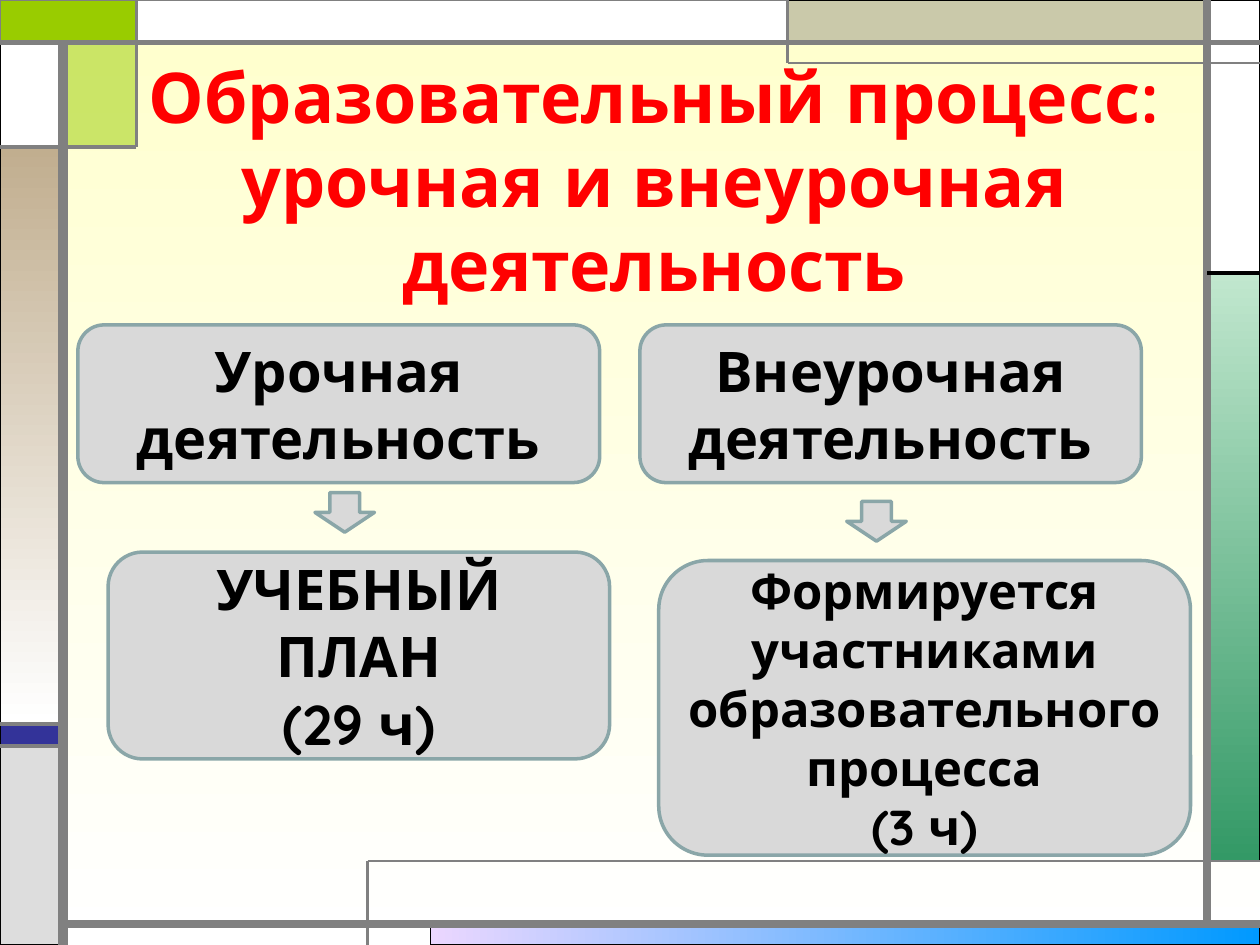
from lxml import etree
from pptx import Presentation
from pptx import util as u
from pptx.dml.color import RGBColor
from pptx.enum import shapes, text
from pptx.oxml.ns import qn

FONT = "Quicksand"
GREY, BLACK, WHITE = "808080", "000000", "FFFFFF"
WIDE, HIGH = 25.4, 19.05
# Shared edges of the frame, in cm
LEFT, RIGHT = 1.27, 24.34
TOP, BASE = 0.85, 18.63
TAB, HEAD = 2.75, 15.88
STEP, DROP = 2.96, 5.5
BAND, FOOT = 14.6, 15.03
NOTE, SHELF = 7.41, 17.36


def tint(code):
    return RGBColor.from_string(code)


def blend(fill, start, end, angle):
    fill.gradient()
    fill.gradient_angle = angle
    for stop, code in zip(fill.gradient_stops, (start, end)):
        stop.color.rgb = tint(code)


def shape(slide, kind, box, fill, line, width):
    item = slide.shapes.add_shape(kind, *map(u.Cm, box))
    item.shadow.inherit = False
    if isinstance(fill, tuple):
        blend(item.fill, *fill)
    else:
        item.fill.solid()
        item.fill.fore_color.rgb = tint(fill)
    item.line.color.rgb = tint(line)
    item.line.width = u.Pt(width)
    return item


def panel(slide, x1, y1, x2, y2, fill, line=BLACK, width=0.75):
    box = (x1, y1, x2 - x1, y2 - y1)
    return shape(slide, shapes.MSO_SHAPE.RECTANGLE, box, fill, line, width)


def fade(item, percent):
    color = item.fill._xPr.find(qn("a:solidFill"))[0]
    etree.SubElement(color, qn("a:alpha"), val=str(percent * 1000))


def rule(slide, x1, y1, x2, y2, width, color=GREY):
    line = slide.shapes.add_connector(
        shapes.MSO_CONNECTOR.STRAIGHT, *map(u.Cm, (x1, y1, x2, y2)))
    line.line.color.rgb = tint(color)
    line.line.width = u.Pt(width)
    etree.SubElement(line._element.spPr, qn("a:effectLst"))


def write(item, words, size=32, color=BLACK, bold=True):
    frame = item.text_frame
    frame.word_wrap = True
    frame.vertical_anchor = text.MSO_ANCHOR.MIDDLE
    frame.text = words
    for para in frame.paragraphs:
        para.alignment = text.PP_ALIGN.CENTER
        font = para.runs[0].font
        font.name, font.size, font.bold = FONT, u.Pt(size), bold
        font.color.rgb = tint(color)


def card(slide, box, words, size=32):
    item = shape(slide, shapes.MSO_SHAPE.ROUNDED_RECTANGLE, box,
                 "D9D9D9", "8AA6A8", 2)
    write(item, words, size=size)


def arrow(slide, x, y):
    shape(slide, shapes.MSO_SHAPE.DOWN_ARROW, (x, y, 1.2, 0.8),
          "D9D9D9", "8AA6A8", 2)


def frame(slide):
    # Coloured panels around the edge
    panel(slide, 8.68, BASE, WIDE, HIGH, ("EBD7FF", "0099FF", 0))
    panel(slide, RIGHT, DROP, WIDE, SHELF, ("C1E7CE", "339966", 270))
    panel(slide, 0, BAND, LEFT, FOOT, "333399")
    panel(slide, 0, FOOT, LEFT, HIGH, "DDDDDD")
    panel(slide, RIGHT, 0, WIDE, DROP, WHITE)
    panel(slide, HEAD, 0, RIGHT, TOP, "CAC9AA")
    fade(panel(slide, LEFT, TOP, TAB, STEP, "99CC00"), 50)
    panel(slide, 0, STEP, LEFT, BAND, ("C1AE8F", WHITE, 270))
    panel(slide, 0, TOP, LEFT, STEP, WHITE)
    panel(slide, 0, 0, TAB, TOP, "99CC00", GREY, 1.5)
    panel(slide, TAB, 0, HEAD, TOP, WHITE, GREY)
    # Main rules
    rule(slide, LEFT, HIGH, LEFT, TOP, 6)
    rule(slide, LEFT, BASE, WIDE, BASE, 4.5)
    rule(slide, RIGHT, BASE, RIGHT, 0, 4.5)
    rule(slide, 0, TOP, WIDE, TOP, 3)
    # Thin rules
    rule(slide, WIDE, 1.27, HEAD, 1.27, 1.5)
    rule(slide, HEAD, 1.27, HEAD, 0, 1.5)
    rule(slide, RIGHT, DROP, WIDE, DROP, 2.25, BLACK)
    rule(slide, TAB, 0, TAB, STEP, 1.5)
    rule(slide, NOTE, HIGH, NOTE, SHELF, 1.5)
    rule(slide, NOTE, SHELF, WIDE, SHELF, 1.5)
    for x, y in ((TAB, STEP), (LEFT, BAND), (LEFT, FOOT)):
        rule(slide, x, y, 0, y, 2.25)


def main():
    deck = Presentation()
    deck.slide_width, deck.slide_height = u.Cm(WIDE), u.Cm(HIGH)
    slide = deck.slides.add_slide(deck.slide_layouts[6])
    blend(slide.background.fill, "FFFFCC", WHITE, 270)
    frame(slide)

    # Title
    title = slide.shapes.add_textbox(*map(u.Cm, (2.39, 1.57, 21.59, 4.09)))
    write(title, "Образовательный процесс: урочная и внеурочная деятельность",
          size=40, color="FF0000")

    # Two branches
    card(slide, (1.57, 6.55, 10.52, 3.18), "Урочная деятельность")
    card(slide, (12.9, 6.55, 10.11, 3.18), "Внеурочная деятельность")
    card(slide, (2.18, 11.13, 10.11, 4.17), "УЧЕБНЫЙ ПЛАН\n(29 ч)")
    arrow(slide, 6.35, 9.93)
    arrow(slide, 17.07, 10.11)
    card(slide, (13.28, 11.3, 10.72, 5.94),
         "Формируется участниками образовательного процесса\n(3 ч)", size=28)

    deck.save("out.pptx")


if __name__ == "__main__":
    main()
